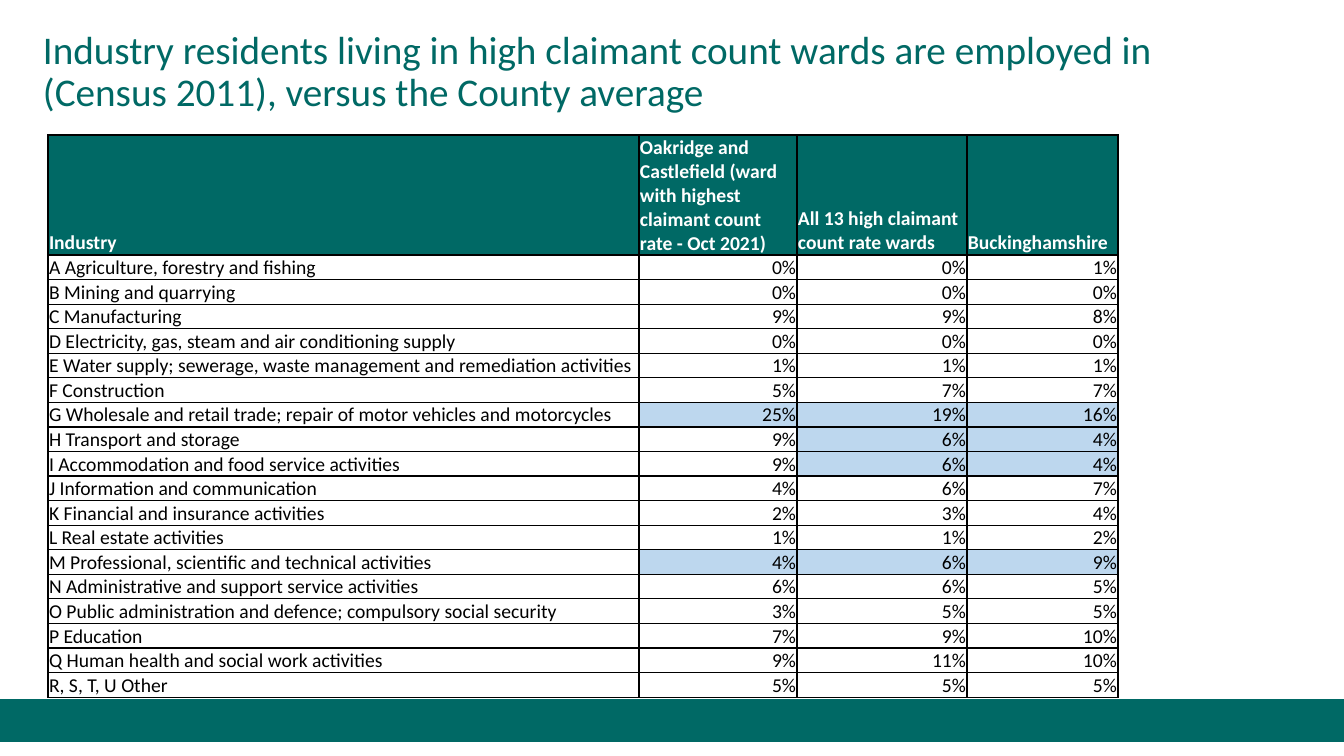
from pptx import Presentation
from pptx.dml.color import RGBColor
from pptx.enum.shapes import MSO_SHAPE
from pptx.enum.text import MSO_ANCHOR, PP_ALIGN
from pptx.oxml import parse_xml
from pptx.oxml.ns import nsdecls
from pptx.util import Pt

# Content
TITLE = ("Industry residents living in high claimant count wards are employed in "
         "(Census 2011), versus the County average")
HEADER = ("Industry",
          "Oakridge and Castlefield (ward with highest claimant count rate - Oct 2021)",
          "All 13 high claimant count rate wards",
          "Buckinghamshire")
INDUSTRIES = [  # name, then percentages for the ward, the 13 wards and the county
    ("A Agriculture, forestry and fishing", 0, 0, 1),
    ("B Mining and quarrying", 0, 0, 0),
    ("C Manufacturing", 9, 9, 8),
    ("D Electricity, gas, steam and air conditioning supply", 0, 0, 0),
    ("E Water supply; sewerage, waste management and remediation activities", 1, 1, 1),
    ("F Construction", 5, 7, 7),
    ("G Wholesale and retail trade; repair of motor vehicles and motorcycles", 25, 19, 16),
    ("H Transport and storage", 9, 6, 4),
    ("I Accommodation and food service activities", 9, 6, 4),
    ("J Information and communication", 4, 6, 7),
    ("K Financial and insurance activities", 2, 3, 4),
    ("L Real estate activities", 1, 1, 2),
    ("M Professional, scientific and technical activities", 4, 6, 9),
    ("N Administrative and support service activities", 6, 6, 5),
    ("O Public administration and defence; compulsory social security", 3, 5, 5),
    ("P Education", 7, 9, 10),
    ("Q Human health and social work activities", 9, 11, 10),
    ("R, S, T, U Other", 5, 5, 5),
]
FIRST_HIGHLIGHT = {"G": 1, "H": 2, "I": 2, "M": 1}  # first shaded column by section

# Layout in px
SLIDE = (1344, 756)
TITLE_BOX = (33, 0, 1159, 146)
FOOTER = (0, 700, 1344, 41)
TABLE_LEFT, TABLE_TOP = 48, 135
COLUMNS = (591, 158, 170, 151)
HEADER_HEIGHT, ROW_HEIGHT = 120, 24
CELL_INSET = 1

FONT = "Calibri"
TEAL, SHADE, WHITE, BLACK = "006965", "BDD7EE", "FFFFFF", "000000"


def px(length):
    return round(length * 12192000 / 1344)


def paint(color_owner, color):
    color_owner.solid()
    color_owner.fore_color.rgb = RGBColor.from_string(color)


def style(para, size, color, bold=False):
    para.font.name = FONT
    para.font.size = Pt(size)
    para.font.bold = bold
    paint(para.font.fill, color)


def add_borders(cell):
    props = cell._tc.get_or_add_tcPr()
    for index, side in enumerate(("lnL", "lnR", "lnT", "lnB")):
        props.insert(index, parse_xml(
            f'<a:{side} {nsdecls("a")} w="{Pt(1)}"><a:solidFill>'
            f'<a:srgbClr val="{BLACK}"/></a:solidFill></a:{side}>'))


def fill_cell(cell, text, fill, color, bold, align):
    cell.text = text
    cell.vertical_anchor = MSO_ANCHOR.BOTTOM
    cell.margin_left = cell.margin_right = cell.margin_top = px(CELL_INSET)
    cell.margin_bottom = 0
    paint(cell.fill, fill)
    add_borders(cell)
    para = cell.text_frame.paragraphs[0]
    para.alignment = align
    style(para, 14, color, bold)


deck = Presentation()
deck.slide_width, deck.slide_height = map(px, SLIDE)
page = deck.slides.add_slide(deck.slide_layouts[6])

# Footer band
band = page.shapes.add_shape(MSO_SHAPE.RECTANGLE, *map(px, FOOTER))
band.shadow.inherit = False
paint(band.fill, TEAL)
paint(band.line.fill, TEAL)
band.line.width = Pt(1)

# Title
box = page.shapes.add_textbox(*map(px, TITLE_BOX))
frame = box.text_frame
frame.word_wrap = True
frame.vertical_anchor = MSO_ANCHOR.MIDDLE
frame.text = TITLE
frame.paragraphs[0].line_spacing = 0.9
style(frame.paragraphs[0], 28, TEAL)

# Industry table
table_height = HEADER_HEIGHT + ROW_HEIGHT * len(INDUSTRIES)
table = page.shapes.add_table(
    len(INDUSTRIES) + 1, len(COLUMNS),
    *map(px, (TABLE_LEFT, TABLE_TOP, sum(COLUMNS), table_height))).table
table.horz_banding = False
for column, width in zip(table.columns, COLUMNS):
    column.width = px(width)
for number, row in enumerate(table.rows):
    row.height = px(ROW_HEIGHT if number else HEADER_HEIGHT)

for col, heading in enumerate(HEADER):
    fill_cell(table.cell(0, col), heading, TEAL, WHITE, True, PP_ALIGN.LEFT)
for number, (name, *shares) in enumerate(INDUSTRIES, start=1):
    fill_cell(table.cell(number, 0), name, WHITE, BLACK, False, PP_ALIGN.LEFT)
    first_shaded = FIRST_HIGHLIGHT.get(name[0], len(COLUMNS))
    for col, share in enumerate(shares, start=1):
        fill = SHADE if col >= first_shaded else WHITE
        fill_cell(table.cell(number, col), f"{share}%", fill, BLACK, False, PP_ALIGN.RIGHT)

deck.save("out.pptx")
